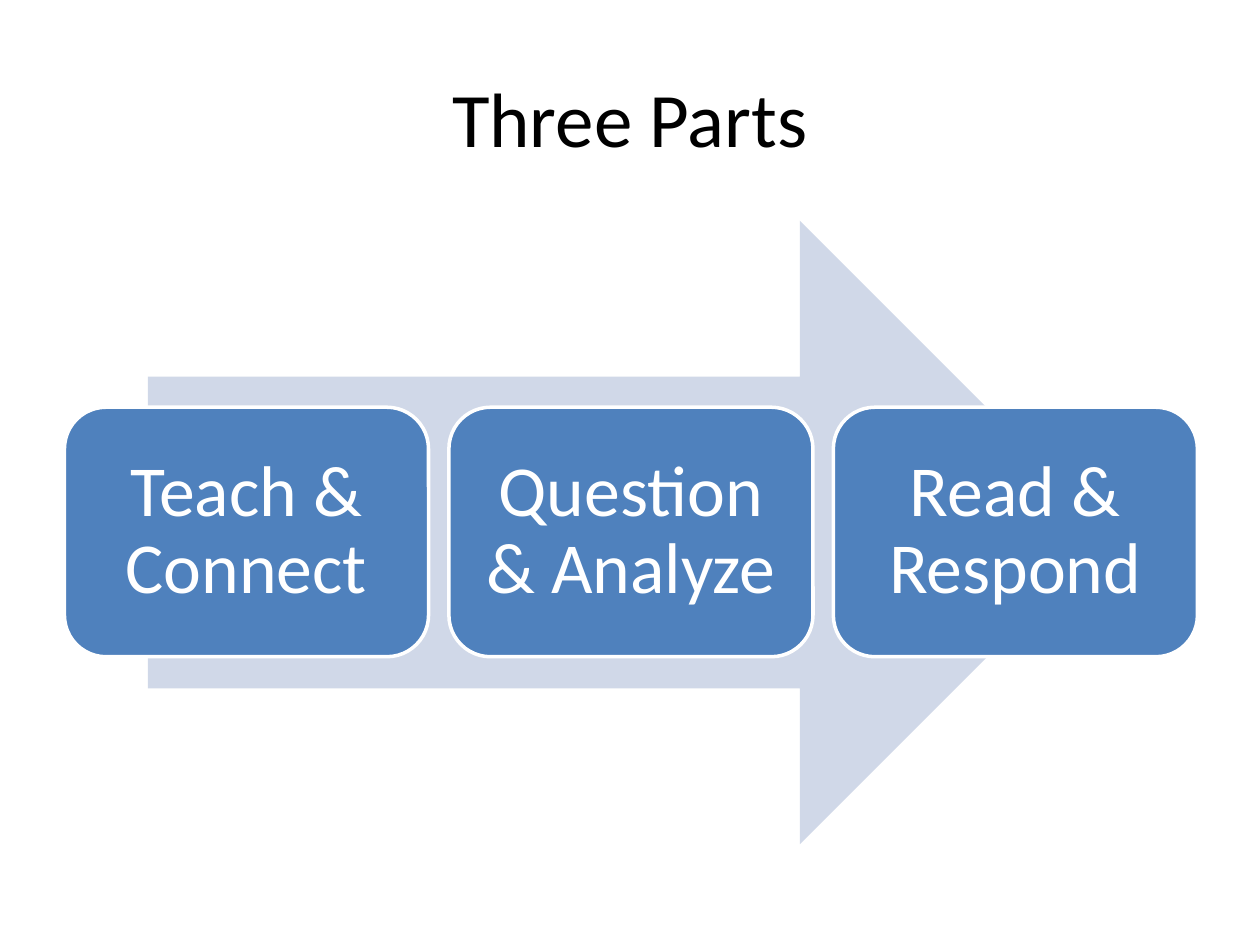
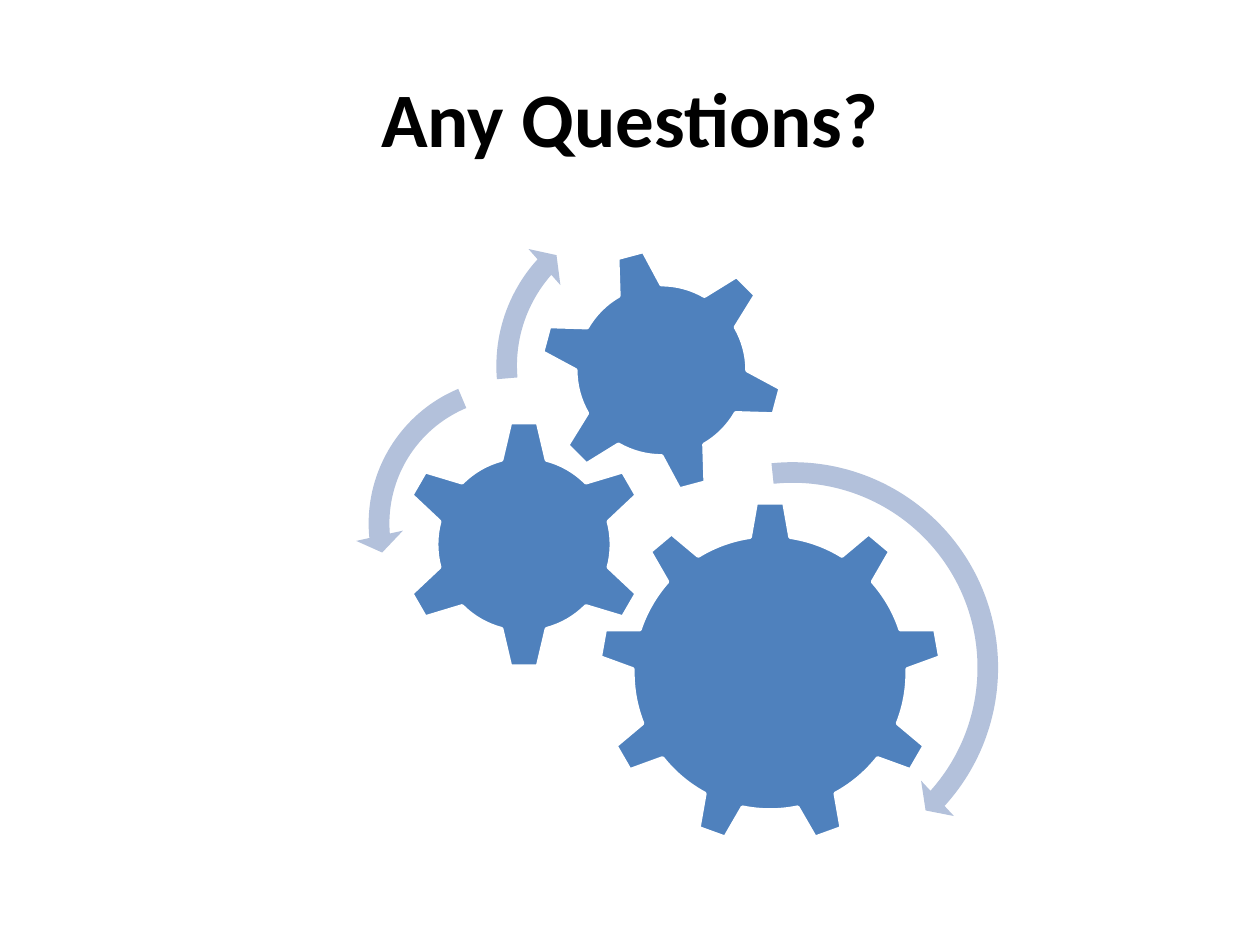
import pptx
import pptx.dml.color
import pptx.enum.shapes
import pptx.enum.text
import pptx.util

Cm = pptx.util.Cm
SHAPES = pptx.enum.shapes.MSO_SHAPE
COLOURS = {
    "title": "000000",
    "main": "4F81BD",
    "white": "FFFFFF",
    "pale": "D0D8E8",
    "arc": "B3C1DB",
}
FONT = "Calibri"
TITLE_ONLY_LAYOUT = 5


def colour(name):
    return pptx.dml.color.RGBColor.from_string(COLOURS[name])


def write_text(shape, text, size=44, color="title", bold=False, line_spacing=None, inset=None):
    """Write one centred paragraph in the middle of a shape."""
    frame = shape.text_frame
    frame.word_wrap = True
    frame.vertical_anchor = pptx.enum.text.MSO_ANCHOR.MIDDLE
    if inset is not None:
        frame.margin_left = frame.margin_right = Cm(inset)
        frame.margin_top = frame.margin_bottom = Cm(inset)
    paragraph = frame.paragraphs[0]
    paragraph.text = text
    paragraph.alignment = pptx.enum.text.PP_ALIGN.CENTER
    if line_spacing is not None:
        paragraph.line_spacing = line_spacing
    font = paragraph.runs[0].font
    font.name = FONT
    font.size = pptx.util.Pt(size)
    font.bold = bold
    font.color.rgb = colour(color)


class Deck:
    """Holds the presentation, its style and the current slide."""

    def __init__(self):
        self.presentation = pptx.Presentation()
        self.presentation.slide_width = Cm(25.4)
        self.presentation.slide_height = Cm(19.05)
        self.slide = None

    def add_slide(self, title, bold=False):
        layout = self.presentation.slide_layouts[TITLE_ONLY_LAYOUT]
        self.slide = self.presentation.slides.add_slide(layout)
        shape = self.slide.shapes.title
        shape.left, shape.top = Cm(1.27), Cm(0.76)
        shape.width, shape.height = Cm(22.86), Cm(3.18)
        write_text(shape, title, bold=bold)

    def add_shape(self, kind, left, top, width, height, fill="main", outlined=True):
        shape = self.slide.shapes.add_shape(kind, Cm(left), Cm(top), Cm(width), Cm(height))
        shape.shadow.inherit = False
        shape.fill.solid()
        shape.fill.fore_color.rgb = colour(fill)
        if outlined:
            shape.line.color.rgb = colour("white")
            shape.line.width = pptx.util.Pt(2)
        else:
            shape.line.fill.background()
        return shape

    def add_gear(self, kind, left, top, size, rotation=0):
        self.add_shape(kind, left, top, size, size).rotation = rotation

    def add_arc(self, kind, left, top, size, adjustments):
        shape = self.add_shape(kind, left, top, size, size, fill="arc", outlined=False)
        for index, value in enumerate(adjustments):
            shape.adjustments[index] = value

    def add_step(self, text, left, top, width, height):
        shape = self.add_shape(SHAPES.ROUNDED_RECTANGLE, left, top, width, height)
        write_text(shape, text, size=41, color="white", line_spacing=0.9, inset=0.43)


def build_parts(deck):
    deck.add_slide("Three Parts")

    # Arrow behind the steps
    deck.add_shape(SHAPES.RIGHT_ARROW, 2.98, 4.45, 19.43, 12.57, fill="pale", outlined=False)

    # Steps in one row
    width, gap = 7.34, 0.41
    for index, text in enumerate(("Teach & Connect", "Question & Analyze", "Read & Respond")):
        deck.add_step(text, 1.3 + index * (width + gap), 8.21, width, 5.03)


def build_questions(deck):
    deck.add_slide("Any Questions?", bold=True)

    # Gears
    deck.add_gear(SHAPES.GEAR_9, 12.07, 10.11, 6.91)
    deck.add_gear(SHAPES.GEAR_6, 8.05, 8.46, 5.03)
    deck.add_gear(SHAPES.GEAR_6, 10.87, 5.0, 4.93, rotation=345)

    # Turning arrows
    right, left = SHAPES.CIRCULAR_ARROW, SHAPES.LEFT_CIRCULAR_ARROW
    deck.add_arc(right, 11.56, 9.04, 8.84, (0.047, 2.99, 25.24, 158.45, 0.055))
    deck.add_arc(left, 7.16, 7.34, 6.43, (0.065, 4.3, 104.89, 148.38, 0.075))
    deck.add_arc(right, 9.73, 3.91, 6.93, (0.06, 3.94, 133.14, 105.08, 0.07))


def main():
    deck = Deck()
    build_parts(deck)
    build_questions(deck)
    deck.presentation.save("out.pptx")


if __name__ == "__main__":
    main()
